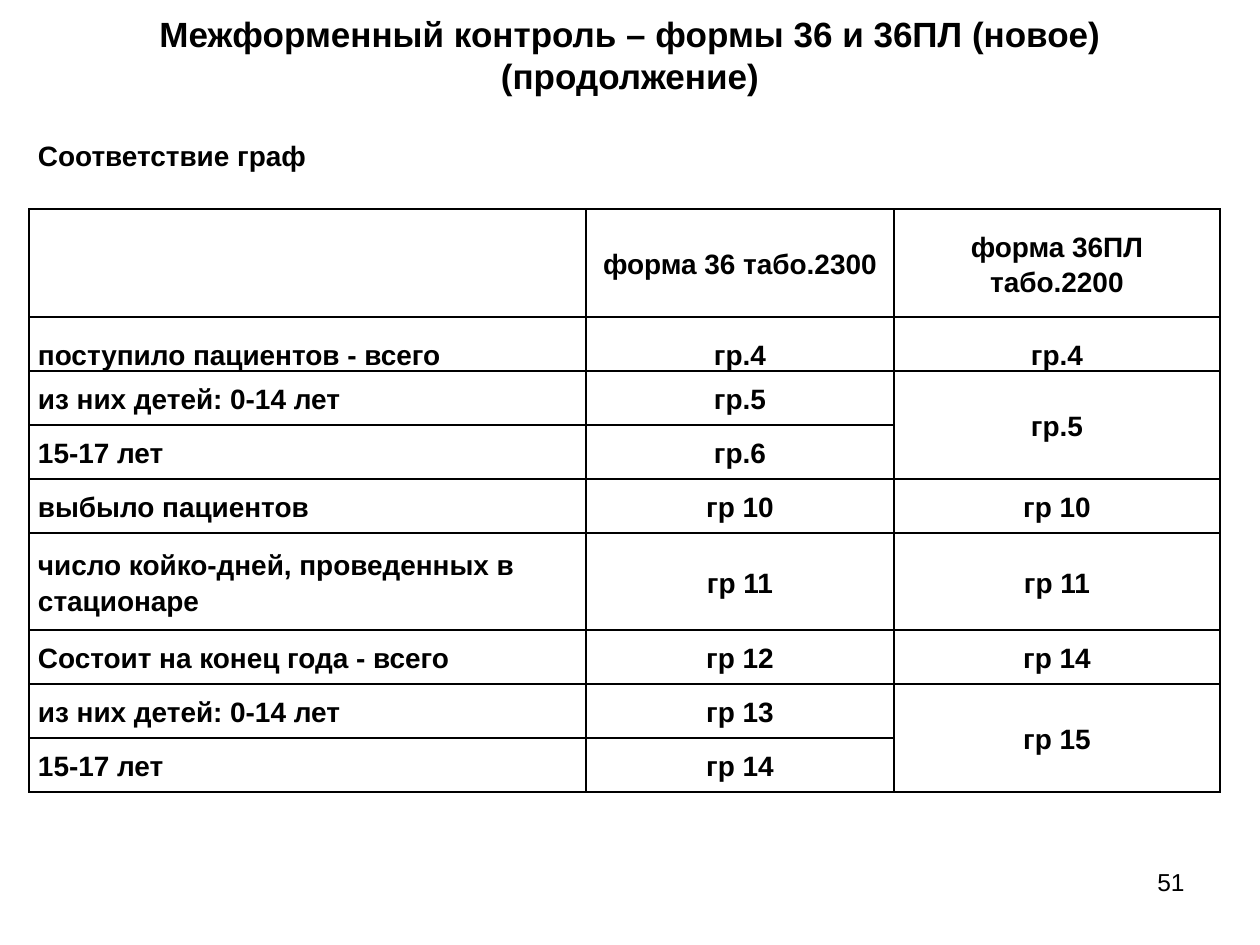
from dataclasses import dataclass
from typing import Any, Optional

from lxml import etree
from pptx import Presentation
from pptx import util as u
from pptx.dml import color
from pptx.enum import shapes, text
from pptx.oxml import ns

EMU_PER_PX = 914400 / 126


@dataclass(frozen=True)
class Theme:
    font: str = "Arial"
    ink: str = "000000"
    paper: str = "FFFFFF"
    title_size: int = 20
    table_size: int = 16
    number_size: int = 14
    line_spacing: float = 1.15
    border_width: int = 1


@dataclass(frozen=True)
class Box:
    left: int
    top: int
    width: int
    height: int


@dataclass(frozen=True)
class Row:
    height: int
    label: str = ""
    form_36: str = ""
    form_36pl: str = ""
    anchor: Any = text.MSO_ANCHOR.MIDDLE
    borders: str = "LRTB"
    rows_merged: int = 1


THEME = Theme()
SINGLE = 54
TITLE = Box(63, 8, 1134, 93)
NUMBER = Box(903, 861, 294, 66)
TABLE_LEFT, TABLE_TOP = 29, 137
COLUMN_WIDTHS = (557, 308, 326)
ROWS = (
    Row(72, "Соответствие граф", anchor=text.MSO_ANCHOR.TOP, borders="B"),
    Row(108, "", "форма 36 табо.2300", "форма 36ПЛ табо.2200"),
    Row(SINGLE, "поступило пациентов - всего", "гр.4", "гр.4", text.MSO_ANCHOR.BOTTOM),
    Row(SINGLE, "из них детей: 0-14 лет", "гр.5", "гр.5", rows_merged=2),
    Row(SINGLE, "15-17 лет", "гр.6"),
    Row(SINGLE, "выбыло пациентов", "гр 10", "гр 10"),
    Row(97, "число койко-дней, проведенных в стационаре", "гр 11", "гр 11"),
    Row(SINGLE, "Состоит на конец года - всего", "гр 12", "гр 14"),
    Row(SINGLE, "из них детей: 0-14 лет", "гр 13", "гр 15", rows_merged=2),
    Row(SINGLE, "15-17 лет", "гр 14"),
    Row(59, borders="T"),
)


def px(length: int) -> int:
    return round(length * EMU_PER_PX)


def apply_format(target: Any, values: dict[str, Any]) -> None:
    for name, value in values.items():
        setattr(target, name, value)


def write_text(frame: Any, words: str, size: int, bold: bool, alignment: Any,
               spacing: Optional[float] = None) -> None:
    paragraph = frame.paragraphs[0]
    apply_format(paragraph, {"alignment": alignment, "line_spacing": spacing})
    run = paragraph.add_run()
    run.text = words
    apply_format(run.font, {"name": THEME.font, "size": u.Pt(size), "bold": bold})
    run.font.color.rgb = color.RGBColor.from_string(THEME.ink)


def set_borders(cell: Any, visible: str) -> None:
    properties = cell._tc.get_or_add_tcPr()
    for position, side in enumerate("LRTB"):
        line = etree.Element(ns.qn(f"a:ln{side}"), w=str(u.Pt(THEME.border_width)))
        if side in visible:
            fill = etree.SubElement(line, ns.qn("a:solidFill"))
            etree.SubElement(fill, ns.qn("a:srgbClr"), val=THEME.ink)
        else:
            etree.SubElement(line, ns.qn("a:noFill"))
        properties.insert(position, line)


def fill_cell(cell: Any, words: str, row: Row, alignment: Any) -> None:
    apply_format(cell, {
        "margin_left": px(9), "margin_right": px(9),
        "margin_top": 0, "margin_bottom": 0,
        "vertical_anchor": row.anchor,
    })
    cell.fill.background()
    set_borders(cell, row.borders)
    if words:
        write_text(cell.text_frame, words, THEME.table_size, True, alignment,
                   THEME.line_spacing)


def add_comparison_table(slide: Any) -> None:
    table = slide.shapes.add_table(
        len(ROWS), len(COLUMN_WIDTHS), px(TABLE_LEFT), px(TABLE_TOP),
        px(sum(COLUMN_WIDTHS)), px(sum(row.height for row in ROWS))).table
    apply_format(table, {"first_row": False, "horz_banding": False})
    for column, width in zip(table.columns, COLUMN_WIDTHS):
        column.width = px(width)
    for row_index, row in enumerate(ROWS):
        table.rows[row_index].height = px(row.height)
        for column_index, words in enumerate((row.label, row.form_36, row.form_36pl)):
            alignment = text.PP_ALIGN.CENTER if column_index else text.PP_ALIGN.LEFT
            fill_cell(table.cell(row_index, column_index), words, row, alignment)
    last = len(COLUMN_WIDTHS) - 1
    for row_index, row in enumerate(ROWS):
        if row.rows_merged > 1:
            end = table.cell(row_index + row.rows_merged - 1, last)
            table.cell(row_index, last).merge(end)


def add_title(slide: Any, box: Box, words: str) -> None:
    shape = slide.shapes.add_shape(shapes.MSO_SHAPE.RECTANGLE, px(box.left), px(box.top),
                                   px(box.width), px(box.height))
    shape.shadow.inherit = False
    shape.fill.solid()
    shape.fill.fore_color.rgb = color.RGBColor.from_string(THEME.paper)
    shape.line.fill.background()
    apply_format(shape.text_frame, {"word_wrap": True,
                                    "vertical_anchor": text.MSO_ANCHOR.MIDDLE})
    write_text(shape.text_frame, words, THEME.title_size, True, text.PP_ALIGN.CENTER)


def add_slide_number(slide: Any, box: Box, words: str) -> None:
    shape = slide.shapes.add_textbox(px(box.left), px(box.top), px(box.width), px(box.height))
    shape.text_frame.word_wrap = True
    write_text(shape.text_frame, words, THEME.number_size, False, text.PP_ALIGN.RIGHT)


def main() -> None:
    presentation = Presentation()
    apply_format(presentation, {"slide_width": px(1260), "slide_height": px(945)})
    slide = presentation.slides.add_slide(presentation.slide_layouts[6])
    add_comparison_table(slide)
    add_slide_number(slide, NUMBER, "51")
    add_title(slide, TITLE, "Межформенный контроль – формы 36 и 36ПЛ (новое) (продолжение)")
    presentation.save("out.pptx")


if __name__ == "__main__":
    main()
